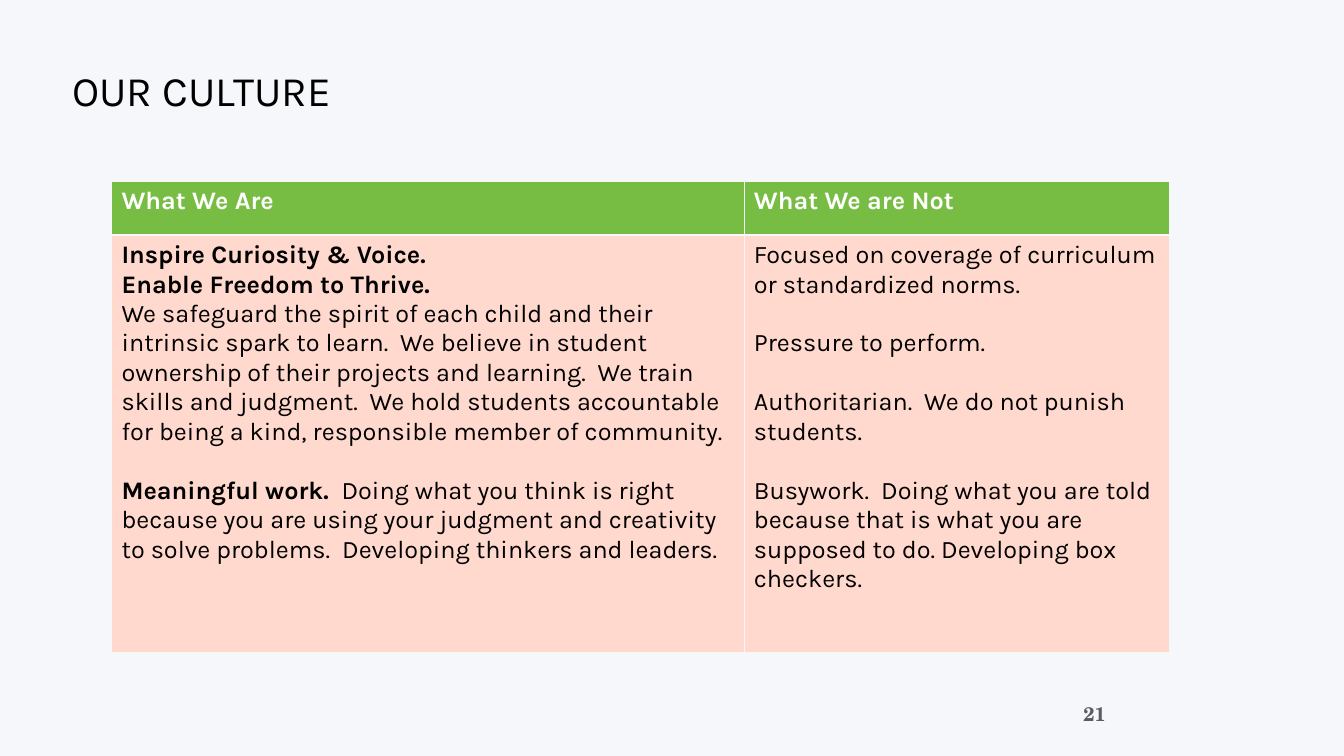
from dataclasses import dataclass

from lxml.etree import SubElement
from pptx import Presentation
from pptx.dml.color import RGBColor
from pptx.enum.text import MSO_ANCHOR, MSO_AUTO_SIZE, PP_ALIGN
from pptx.oxml.ns import qn
from pptx.slide import Slide
from pptx.table import _Cell
from pptx.util import Pt


@dataclass(frozen=True)
class Theme:
    background: str = "F6F7FA"
    header: str = "77BD43"
    body: str = "FFD9CE"
    ink: str = "000000"
    header_ink: str = "FFFFFF"
    number_ink: str = "595D63"
    font: str = "Karla"
    number_font: str = "TeX Gyre Schola"
    title_size: int = 60
    table_size: int = 36
    number_size: int = 28
    paragraph_gap: float = 42.1
    thin_border: int = 1
    thick_border: int = 3


@dataclass(frozen=True)
class Entry:
    text: str
    lead: str = ""
    bold: bool = False
    gap: bool = False


@dataclass(frozen=True)
class Column:
    heading: str
    width: float
    entries: tuple[Entry, ...]


THEME = Theme()
ROW_HEIGHTS = (77.8, 595.4)
COLUMNS = (
    Column("What We Are", 902.9, (
        Entry("Inspire Curiosity & Voice.", bold=True),
        Entry("Enable Freedom to Thrive.", bold=True),
        Entry("We safeguard the spirit of each child and their intrinsic spark to learn.  "
              "We believe in student ownership of their projects and learning.  "
              "We train skills and judgment.  We hold students accountable for being "
              "a kind, responsible member of community."),
        Entry("Doing what you think is right because you are using your judgment and "
              "creativity to solve problems.  Developing thinkers and leaders.",
              lead="Meaningful work.  ", gap=True),
    )),
    Column("What We are Not", 607, (
        Entry("Focused on coverage of curriculum or standardized norms."),
        Entry("Pressure to perform.", gap=True),
        Entry("Authoritarian.  We do not punish students.", gap=True),
        Entry("Busywork.  Doing what you are told because that is what you are "
              "supposed to do. Developing box checkers.", gap=True),
    )),
)


def set_font(font, name: str, size: int, color: str, bold: bool = False) -> None:
    font.name = name
    font.size = Pt(size)
    font.bold = bold
    font.color.rgb = RGBColor.from_string(color)


def add_borders(cell: _Cell, top: int, bottom: int) -> None:
    properties = cell._tc.get_or_add_tcPr()
    widths = {"L": THEME.thin_border, "R": THEME.thin_border, "T": top, "B": bottom}
    for side, width in widths.items():
        line = SubElement(properties, qn(f"a:ln{side}"), w=str(Pt(width)))
        fill = SubElement(line, qn("a:solidFill"))
        SubElement(fill, qn("a:srgbClr"), val=THEME.background)


def fill_cell(cell: _Cell, entries: tuple[Entry, ...], fill: str, ink: str) -> None:
    cell.margin_left = cell.margin_right = Pt(14.4)
    cell.margin_top = cell.margin_bottom = Pt(7.2)
    cell.fill.solid()
    cell.fill.fore_color.rgb = RGBColor.from_string(fill)
    frame = cell.text_frame
    for index, entry in enumerate(entries):
        para = frame.add_paragraph() if index else frame.paragraphs[0]
        if entry.gap:
            para.space_before = Pt(THEME.paragraph_gap)
        if entry.lead:
            for text, bold in ((entry.lead, True), (entry.text, entry.bold)):
                span = para.add_run()
                span.text = text
                set_font(span.font, THEME.font, THEME.table_size, ink, bold)
        else:
            para.text = entry.text
            set_font(para.font, THEME.font, THEME.table_size, ink, entry.bold)


def format_title(page: Slide, text: str) -> None:
    title = page.shapes.title
    title.left, title.top, title.width, title.height = Pt(95.8), Pt(14.4), Pt(1727.3), Pt(237.6)
    frame = title.text_frame
    frame.auto_size = MSO_AUTO_SIZE.NONE
    frame.vertical_anchor = MSO_ANCHOR.MIDDLE
    frame.margin_left = frame.margin_right = frame.margin_top = frame.margin_bottom = Pt(7.2)
    para = frame.paragraphs[0]
    para.text = text
    para.alignment = PP_ALIGN.LEFT
    para.line_spacing = 0.9
    set_font(para.font, THEME.font, THEME.title_size, THEME.ink)


def add_culture_table(page: Slide) -> None:
    frame = page.shapes.add_table(len(ROW_HEIGHTS), len(COLUMNS), Pt(159.1), Pt(258.5),
                                  Pt(sum(column.width for column in COLUMNS)), Pt(sum(ROW_HEIGHTS)))
    table = frame.table
    table.horz_banding = False
    for row, height in zip(table.rows, ROW_HEIGHTS):
        row.height = Pt(height)
    for index, column in enumerate(COLUMNS):
        table.columns[index].width = Pt(column.width)
        header, body = table.cell(0, index), table.cell(1, index)
        add_borders(header, THEME.thin_border, THEME.thick_border)
        add_borders(body, THEME.thick_border, THEME.thin_border)
        fill_cell(header, (Entry(column.heading, bold=True),), THEME.header, THEME.header_ink)
        fill_cell(body, column.entries, THEME.body, THEME.ink)


def add_page_number(page: Slide, number: str) -> None:
    box = page.shapes.add_textbox(Pt(1514.9), Pt(978.5), Pt(95.8), Pt(82.1))
    frame = box.text_frame
    frame.word_wrap = True
    frame.vertical_anchor = MSO_ANCHOR.MIDDLE
    para = frame.paragraphs[0]
    para.text = number
    para.alignment = PP_ALIGN.CENTER
    set_font(para.font, THEME.number_font, THEME.number_size, THEME.number_ink, True)


def main() -> None:
    deck = Presentation()
    deck.slide_width, deck.slide_height = Pt(1918.8), Pt(1080)
    page = deck.slides.add_slide(deck.slide_layouts.get_by_name("Title Only"))
    page.background.fill.solid()
    page.background.fill.fore_color.rgb = RGBColor.from_string(THEME.background)
    format_title(page, "OUR CULTURE")
    add_page_number(page, "21")
    add_culture_table(page)
    deck.save("out.pptx")


if __name__ == "__main__":
    main()
